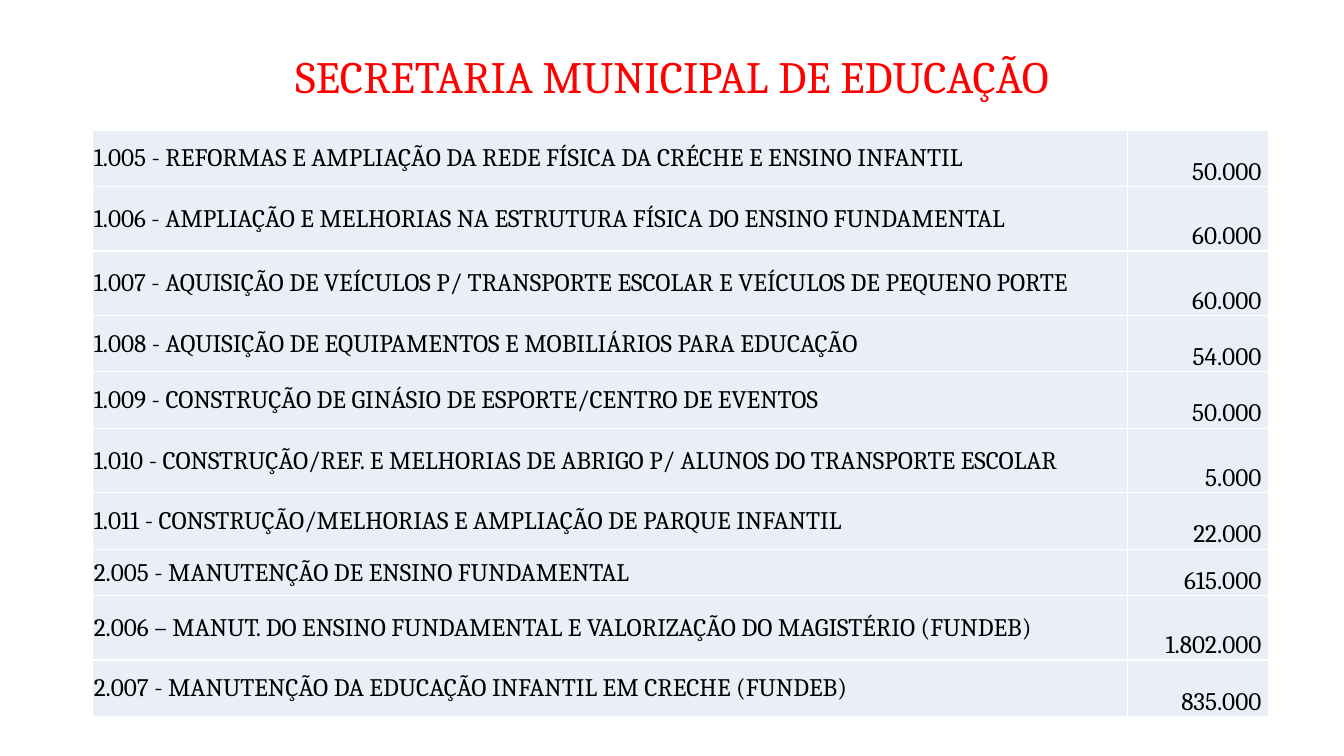
from typing import NamedTuple

from lxml.etree import SubElement
from pptx import Presentation
from pptx.dml.color import RGBColor
from pptx.enum.text import MSO_ANCHOR, PP_ALIGN
from pptx.oxml.ns import qn
from pptx.util import Emu, Pt

FONT = "Cambria"
RED, BLACK, WHITE, PALE_BLUE = "FF0000", "000000", "FFFFFF", "EAEFF7"
COLUMN_WIDTHS = (1026, 140)


class BudgetLine(NamedTuple):
    action: str
    amount: str
    height: int


BUDGET = [
    BudgetLine("1.005 - REFORMAS E AMPLIAÇÃO DA REDE FÍSICA DA CRÉCHE E ENSINO INFANTIL", "50.000", 56),
    BudgetLine("1.006 - AMPLIAÇÃO E MELHORIAS NA ESTRUTURA FÍSICA DO ENSINO FUNDAMENTAL", "60.000", 64),
    BudgetLine("1.007 - AQUISIÇÃO DE VEÍCULOS P/ TRANSPORTE ESCOLAR E VEÍCULOS DE PEQUENO PORTE", "60.000", 64),
    BudgetLine("1.008 - AQUISIÇÃO DE EQUIPAMENTOS E MOBILIÁRIOS PARA EDUCAÇÃO", "54.000", 56),
    BudgetLine("1.009 - CONSTRUÇÃO DE GINÁSIO DE ESPORTE/CENTRO DE EVENTOS", "50.000", 56),
    BudgetLine("1.010 - CONSTRUÇÃO/REF. E MELHORIAS DE ABRIGO P/ ALUNOS DO TRANSPORTE ESCOLAR", "5.000", 64),
    BudgetLine("1.011 - CONSTRUÇÃO/MELHORIAS E AMPLIAÇÃO DE PARQUE INFANTIL", "22.000", 56),
    BudgetLine("2.005 - MANUTENÇÃO DE ENSINO FUNDAMENTAL", "615.000", 46),
    BudgetLine("2.006 – MANUT. DO ENSINO FUNDAMENTAL E VALORIZAÇÃO DO MAGISTÉRIO (FUNDEB)", "1.802.000", 64),
    BudgetLine("2.007 - MANUTENÇÃO DA EDUCAÇÃO INFANTIL EM CRECHE (FUNDEB)", "835.000", 56),
]


def px(n: int) -> Emu:
    """Convert px, at 100 to the inch, into EMU."""
    return Emu(n * 9144)


def rgb(color: str) -> RGBColor:
    return RGBColor.from_string(color)


def write(p, text: str, size: int, color: str, align: PP_ALIGN) -> None:
    p.text = text
    p.alignment = align
    p.font.name = FONT
    p.font.size = Pt(size)
    p.font.color.rgb = rgb(color)


def add_borders(cell, color: str) -> None:
    tc_pr = cell._tc.get_or_add_tcPr()
    for side in ("a:lnL", "a:lnR", "a:lnT", "a:lnB"):
        ln = SubElement(tc_pr, qn(side), w=str(Pt(1)))
        SubElement(SubElement(ln, qn("a:solidFill")), qn("a:srgbClr"), val=color)


def fill_cell(cell, text: str, align: PP_ALIGN, anchor: MSO_ANCHOR, right: int) -> None:
    add_borders(cell, WHITE)
    cell.fill.solid()
    cell.fill.fore_color.rgb = rgb(PALE_BLUE)
    cell.margin_left = cell.margin_top = px(1)
    cell.margin_right, cell.margin_bottom = px(right), 0
    cell.vertical_anchor = anchor
    write(cell.text_frame.paragraphs[0], text, 18, BLACK, align)


def add_title(s, text: str) -> None:
    tf = s.shapes.add_textbox(px(92), px(40), px(1150), px(77)).text_frame
    tf.word_wrap = True
    tf.vertical_anchor = MSO_ANCHOR.MIDDLE
    p = tf.paragraphs[0]
    write(p, text, 32, RED, PP_ALIGN.CENTER)
    p.line_spacing = 0.9


def add_budget_table(s, lines: list[BudgetLine]) -> None:
    table = s.shapes.add_table(
        len(lines), len(COLUMN_WIDTHS), px(92), px(129),
        px(sum(COLUMN_WIDTHS)), px(sum(line.height for line in lines)),
    ).table
    table.first_row = table.horz_banding = False
    for column, width in zip(table.columns, COLUMN_WIDTHS):
        column.width = px(width)
    for row, line in zip(table.rows, lines):
        row.height = px(line.height)
        action, amount = row.cells
        fill_cell(action, line.action, PP_ALIGN.LEFT, MSO_ANCHOR.MIDDLE, right=1)
        fill_cell(amount, line.amount, PP_ALIGN.RIGHT, MSO_ANCHOR.BOTTOM, right=7)


def main() -> None:
    prs = Presentation()
    prs.slide_width, prs.slide_height = px(1333), px(750)
    s = prs.slides.add_slide(prs.slide_layouts[6])
    add_title(s, "SECRETARIA MUNICIPAL DE EDUCAÇÃO")
    add_budget_table(s, BUDGET)
    prs.save("out.pptx")


if __name__ == "__main__":
    main()
